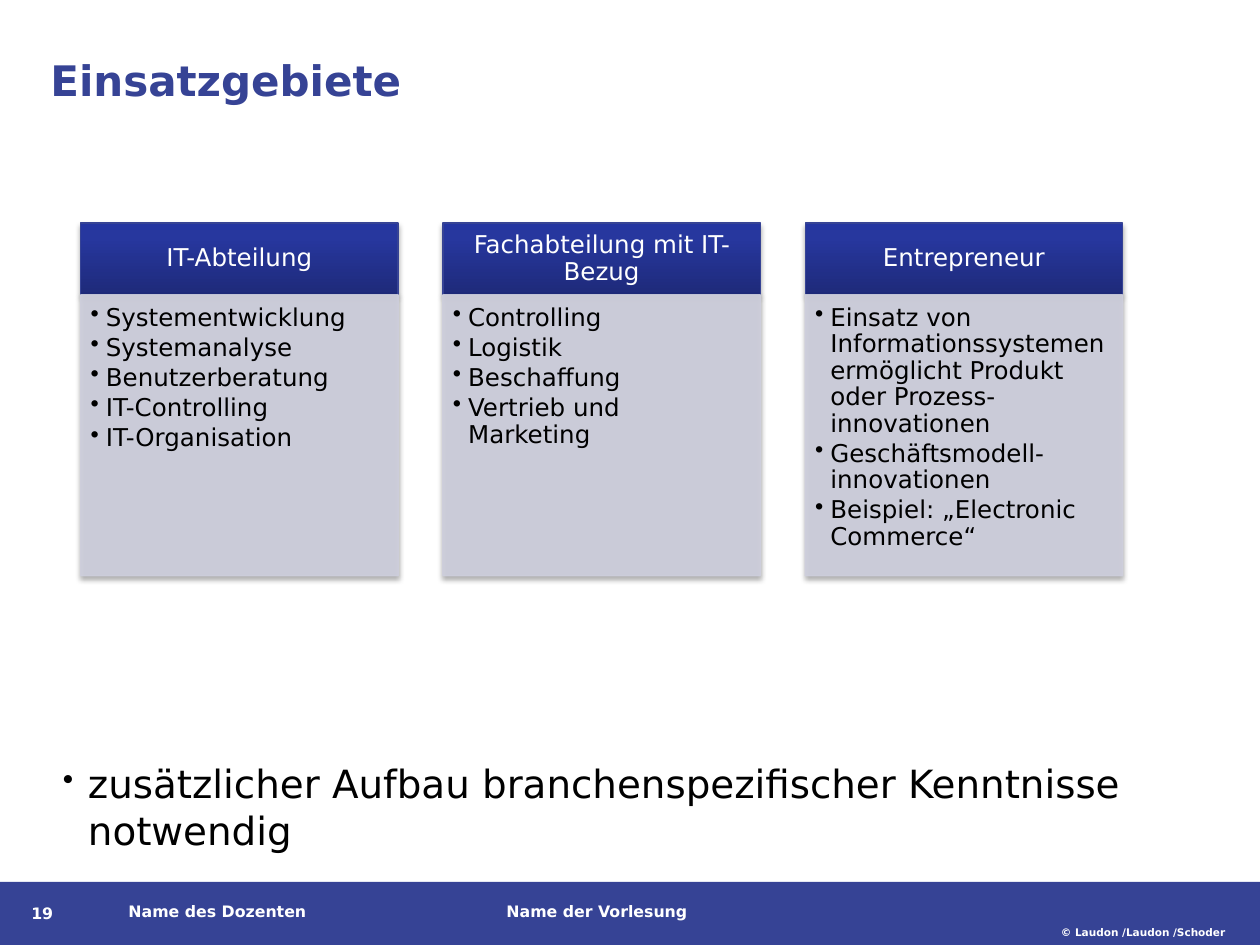
from copy import deepcopy
from dataclasses import dataclass

from lxml import etree
from pptx import Presentation
from pptx import util as u
from pptx.dml.color import RGBColor
from pptx.enum import shapes, text
from pptx.oxml import parse_xml
from pptx.oxml.ns import qn

NS = 'xmlns:a="http://schemas.openxmlformats.org/drawingml/2006/main"'


@dataclass(frozen=True)
class Theme:
    """Colours, font and type sizes of the slide."""
    font: str = "DejaVu Sans"
    brand: str = "364395"
    white: str = "FFFFFF"
    black: str = "000000"
    panel: str = "CECFDD"
    header_stops: tuple = ((0, "1E2A7A"), (0.8, "27379E"), (1, "2435A1"))
    title_size: float = 24
    note_size: float = 22.2
    column_size: float = 14
    footer_size: float = 9
    copyright_size: float = 6


THEME = Theme()

COLUMNS = [
    ("IT-Abteilung", ["Systementwicklung", "Systemanalyse", "Benutzerberatung",
                      "IT-Controlling", "IT-Organisation"]),
    ("Fachabteilung mit IT-Bezug", ["Controlling", "Logistik", "Beschaffung",
                                    "Vertrieb und Marketing"]),
    ("Entrepreneur", [
        "Einsatz von Informationssystemen ermöglicht Produkt oder Prozess-innovationen",
        "Geschäftsmodell-innovationen", "Beispiel: „Electronic Commerce“"]),
]
COLUMN_LEFT, COLUMN_PITCH, COLUMN_WIDTH = 0.64, 2.875, 2.52
HEADER_TOP, HEADER_HEIGHT, PANEL_HEIGHT = 1.77, 0.57, 2.23


def rgb(color):
    """Turn a hex string into a colour."""
    return RGBColor.from_string(color)


def add_bullet(paragraph, indent, percent):
    """Give a paragraph a hanging bullet."""
    props = paragraph._p.get_or_add_pPr()
    props.set("marL", str(u.Inches(indent)))
    props.set("indent", str(-u.Inches(indent)))
    etree.SubElement(props, qn("a:buSzPct"), val=str(percent * 1000))
    etree.SubElement(props, qn("a:buChar"), char="•")


def add_tabs(paragraph, stops):
    """Set left tab stops on a paragraph."""
    tabs = etree.SubElement(paragraph._p.get_or_add_pPr(), qn("a:tabLst"))
    for stop in stops:
        etree.SubElement(tabs, qn("a:tab"), pos=str(u.Inches(stop)), algn="l")


def write(shape, lines, *, size, color, bold=False, align=text.PP_ALIGN.LEFT,
          anchor=text.MSO_ANCHOR.TOP, insets=(0, 0, 0, 0), indent=0,
          bullet_percent=100, spacing=None, after=0, tabs=()):
    """Write formatted paragraphs into a shape."""
    frame = shape.text_frame
    frame.word_wrap = True
    frame.vertical_anchor = anchor
    (frame.margin_left, frame.margin_top,
     frame.margin_right, frame.margin_bottom) = map(u.Inches, insets)
    for index, line in enumerate(lines):
        paragraph = frame.add_paragraph() if index else frame.paragraphs[0]
        paragraph.alignment = align
        if indent:
            add_bullet(paragraph, indent, bullet_percent)
        if tabs:
            add_tabs(paragraph, tabs)
        if spacing:
            paragraph.line_spacing = spacing
        paragraph.space_after = u.Pt(after)
        run = paragraph.add_run()
        run.text = line
        run.font.name = THEME.font
        run.font.size = u.Pt(size)
        run.font.bold = bold
        run.font.color.rgb = rgb(color)


def add_label(slide, box, line, **style):
    """Add a text box with one paragraph."""
    label = slide.shapes.add_textbox(*map(u.Inches, box))
    write(label, [line], **style)


def add_rectangle(slide, box):
    """Add a rectangle without shadow."""
    rectangle = slide.shapes.add_shape(
        shapes.MSO_SHAPE.RECTANGLE, *map(u.Inches, box))
    rectangle.shadow.inherit = False
    return rectangle


def set_line(shape, color):
    """Outline a shape with a thin line."""
    shape.line.color.rgb = rgb(color)
    shape.line.width = u.Pt(0.75)


def add_shadow(shape):
    """Drop a soft shadow below a shape."""
    effects = shape._element.spPr.find(qn("a:effectLst"))
    effects.append(parse_xml(
        f'<a:outerShdw {NS} blurRad="{u.Pt(3.1)}" dist="{u.Pt(1.8)}" '
        f'dir="5400000" rotWithShape="0"><a:srgbClr val="{THEME.black}">'
        '<a:alpha val="35000"/></a:srgbClr></a:outerShdw>'))


def fill_gradient(shape, stops):
    """Fill a shape with a gradient that runs upwards."""
    shape.fill.gradient()
    shape.fill.gradient_angle = 90
    stop_list = shape._element.spPr.find(f".//{qn('a:gsLst')}")
    while len(stop_list) < len(stops):
        stop_list.append(deepcopy(stop_list[-1]))
    for stop, (position, color) in zip(shape.fill.gradient_stops, stops):
        stop.position = position
        stop.color.rgb = rgb(color)


def set_opacity(shape, percent):
    """Make the fill and line of a shape partly transparent."""
    for color in shape._element.spPr.findall(f".//{qn('a:solidFill')}/{qn('a:srgbClr')}"):
        etree.SubElement(color, qn("a:alpha"), val=str(percent * 1000))


def add_column(slide, left, heading, items):
    """Add a header with its bulleted panel."""
    header = add_rectangle(slide, (left, HEADER_TOP, COLUMN_WIDTH, HEADER_HEIGHT))
    fill_gradient(header, THEME.header_stops)
    set_line(header, THEME.brand)
    add_shadow(header)
    write(header, [heading], size=THEME.column_size, color=THEME.white,
          align=text.PP_ALIGN.CENTER, anchor=text.MSO_ANCHOR.MIDDLE,
          insets=(0.11, 0.06, 0.11, 0.06), spacing=0.9)

    panel = add_rectangle(
        slide, (left, HEADER_TOP + HEADER_HEIGHT, COLUMN_WIDTH, PANEL_HEIGHT))
    panel.fill.solid()
    panel.fill.fore_color.rgb = rgb(THEME.panel)
    set_line(panel, THEME.panel)
    set_opacity(panel, 90)
    add_shadow(panel)
    write(panel, items, size=THEME.column_size, color=THEME.black,
          insets=(0.08, 0.08, 0.11, 0.12), indent=0.12, spacing=0.9, after=2.1)


def add_footer(slide):
    """Add the footer band with its labels."""
    band = add_rectangle(slide, (0, 7, 10, 0.5))
    band.fill.solid()
    band.fill.fore_color.rgb = rgb(THEME.brand)
    band.line.fill.background()
    style = dict(color=THEME.white, bold=True)
    add_label(slide, (8.42, 7.35, 1.5, 0.15), "© Laudon /Laudon /Schoder",
              size=THEME.copyright_size, **style)
    add_label(slide, (1.02, 7.16, 6.66, 0.18), "Name des Dozenten\t\tName der Vorlesung",
              size=THEME.footer_size, tabs=(2, 3), **style)
    add_label(slide, (0.15, 7.12, 0.75, 0.19), "19", size=THEME.footer_size,
              insets=(0.1, 0.05, 0.1, 0.05), **style)


def main():
    """Build the slide and save it."""
    deck = Presentation()
    deck.slide_width, deck.slide_height = u.Inches(10), u.Inches(7.5)
    slide = deck.slides.add_slide(deck.slide_layouts[6])
    add_footer(slide)
    add_label(slide, (0.4, 0.43, 9, 0.98), "Einsatzgebiete", size=THEME.title_size,
              color=THEME.brand, bold=True, insets=(0, 0, 0.1, 0.05))
    add_label(slide, (0.4, 5.98, 9, 0.82),
              "zusätzlicher Aufbau branchenspezifischer Kenntnisse notwendig",
              size=THEME.note_size, color=THEME.black,
              insets=(0.1, 0.05, 0.1, 0.05), indent=0.2, bullet_percent=80)
    for index, (heading, items) in enumerate(COLUMNS):
        add_column(slide, COLUMN_LEFT + index * COLUMN_PITCH, heading, items)
    deck.save("out.pptx")


if __name__ == "__main__":
    main()
